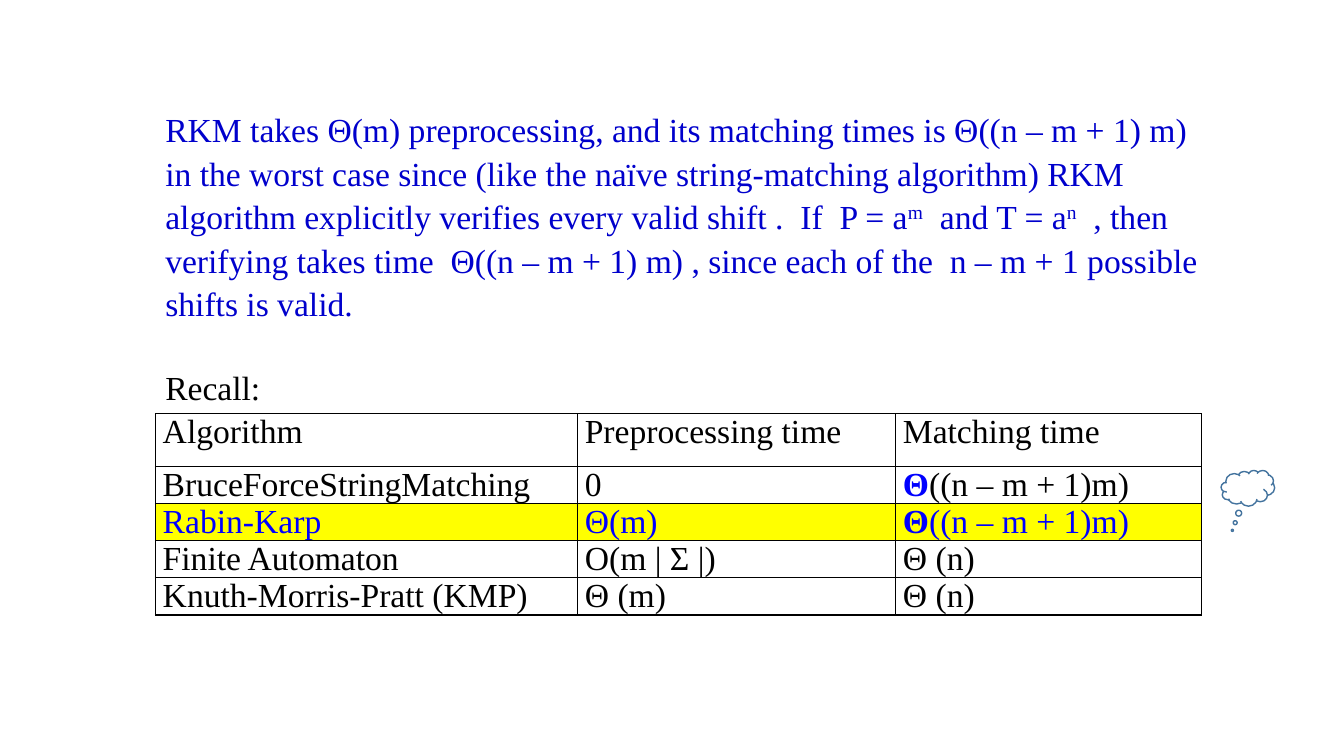
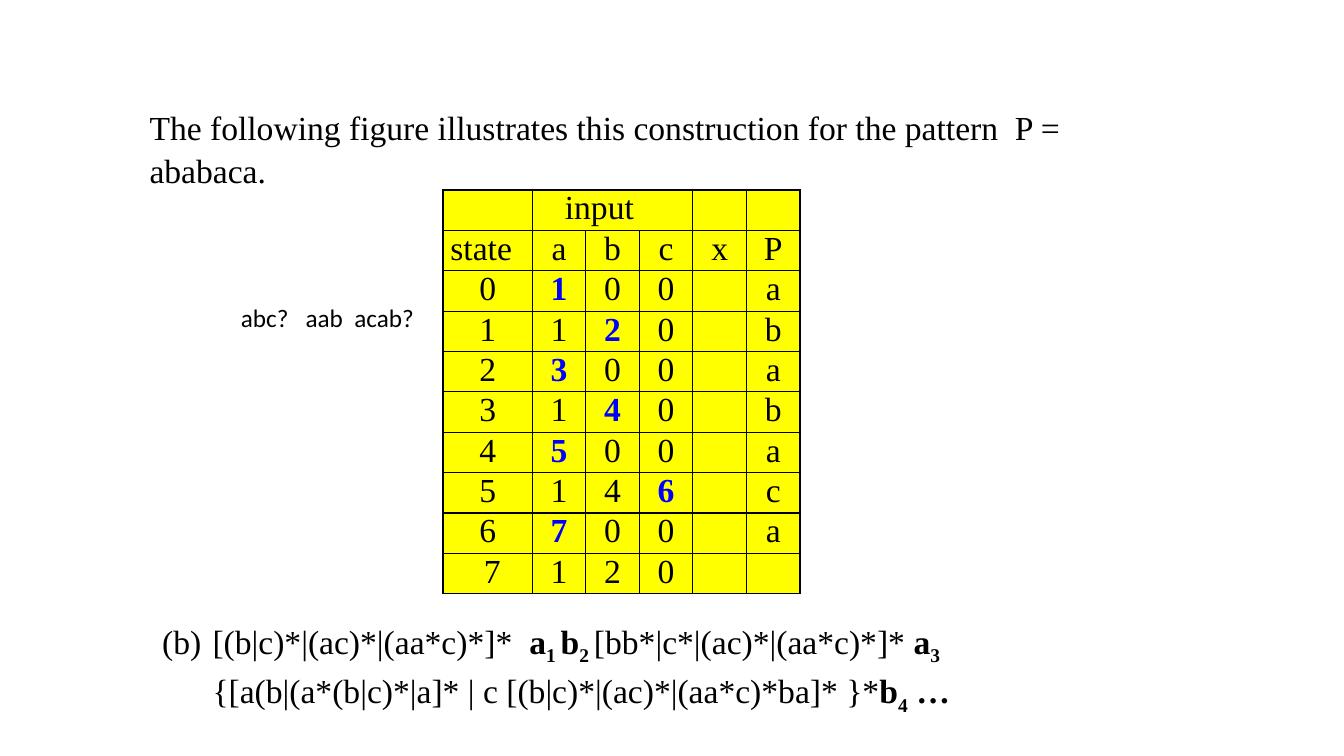
"""Build two slides on string matching: running times and a finite automaton."""
from lxml import etree
from pptx import Presentation
from pptx import util as u
from pptx.dml.color import RGBColor
from pptx.enum import shapes, text
from pptx.oxml.ns import qn

PX = 9525
SERIF = "Times New Roman"
BLACK, BLUE, NAVY = "000000", "0000FF", "0000CC"
WHITE, YELLOW, STEEL = "FFFFFF", "FFFF00", "43739E"
LINE_SPACING = 1.08
color = RGBColor.from_string


def add_runs(paragraph, runs, font=SERIF, size=24):
    """Add (text, colour, bold, baseline) runs; the last two may be left out."""
    for words, hue, *style in runs:
        bold, baseline = (style + [False, 0])[:2] if len(style) < 2 else style
        run = paragraph.add_run()
        run.text = words
        run.font.name, run.font.size, run.font.bold = font, u.Pt(size), bold
        run.font.color.rgb = color(hue)
        if baseline:
            run._r.get_or_add_rPr().set("baseline", str(baseline * 1000))


def add_grid(slide, left, top, widths, heights, rows, fills):
    """Add a black-ruled table whose cells hold lists of runs."""
    frame = slide.shapes.add_table(len(rows), len(widths), left * PX, top * PX,
                                   sum(widths) * PX, sum(heights) * PX)
    table = frame.table
    table.first_row = table.horz_banding = False
    for column, width in zip(table.columns, widths):
        column.width = width * PX
    for row, height, runs_in_row, fill in zip(table.rows, heights, rows, fills):
        row.height = height * PX
        for cell, runs in zip(row.cells, runs_in_row):
            cell.margin_left = cell.margin_right = 7 * PX
            cell.margin_top = cell.margin_bottom = 0
            add_runs(cell.text_frame.paragraphs[0], runs)
            properties = cell._tc.get_or_add_tcPr()
            for side in ("a:lnL", "a:lnR", "a:lnT", "a:lnB"):
                border = etree.SubElement(properties, qn(side), w=str(u.Pt(1)))
                solid = etree.SubElement(border, qn("a:solidFill"))
                etree.SubElement(solid, qn("a:srgbClr"), val=BLACK)
            cell.fill.solid()
            cell.fill.fore_color.rgb = color(fill)
    return table


presentation = Presentation()
presentation.slide_width, presentation.slide_height = 1280 * PX, 720 * PX
times_slide, automaton_slide = [
    presentation.slides.add_slide(presentation.slide_layouts[6]) for _ in range(2)]

algorithms = [
    ("Algorithm", "Preprocessing time", "Matching time"),
    ("BruceForceStringMatching", "0", "Θ((n – m + 1)m)"),
    ("Rabin-Karp", "Θ(m)", "Θ((n – m + 1)m)"),
    ("Finite Automaton", "O(m | Σ |)", "Θ (n)"),
    ("Knuth-Morris-Pratt (KMP)", "Θ (m)", "Θ (n)"),
]
time_rows, time_fills = [], []
for words_in_row in algorithms:
    highlighted = words_in_row[0] == "Rabin-Karp"
    hue = BLUE if highlighted else BLACK
    time_fills.append(YELLOW if highlighted else WHITE)
    time_rows.append([
        [("Θ", BLUE, True), (words[1:], hue)] if words.startswith("Θ((") else [(words, hue)]
        for words in words_in_row])
add_grid(times_slide, 148, 394, [402, 303, 291], [50] + [35] * 4, time_rows, time_fills)

automaton_rows = [
    [[], [("input", BLACK)], [], [], [], []],
    [[(heading, BLACK)] for heading in ("state", "a", "b", "c", "x", "P")],
]
transitions = ["100", "120", "300", "140", "500", "146", "700", "120"]
pattern = "ababaca"
for state, targets in enumerate(transitions):
    row = [[(str(state), BLACK)]]
    for target in targets:
        advances = int(target) == state + 1
        row.append([(target, BLUE if advances else BLACK, advances)])
    letter = pattern[state:state + 1]
    automaton_rows.append(row + [[], [(letter, BLACK)] if letter else []])
table = add_grid(automaton_slide, 422, 181, [85] + [51] * 5, [35] * 10,
                 automaton_rows, [YELLOW] * 10)
for row in list(table.rows)[1:]:
    for cell in row.cells:
        cell.text_frame.paragraphs[0].alignment = text.PP_ALIGN.CENTER
table.cell(0, 1).merge(table.cell(0, 3))
for row, column, inset in ((0, 1, 31), (1, 0, 7), (9, 0, 39)):
    cell = table.cell(row, column)
    cell.margin_left = inset * PX
    cell.text_frame.paragraphs[0].alignment = text.PP_ALIGN.LEFT

analysis = [
    ("RKM takes Θ(m) preprocessing, and its matching times is Θ((n – m + 1) m) in the "
     "worst case since (like the naïve string-matching algorithm) RKM algorithm "
     "explicitly verifies every valid shift .  If  P = a", NAVY),
    ("m", NAVY, False, 30),
    ("  and T = a", NAVY),
    ("n", NAVY, False, 30),
    ("  , then verifying takes time  Θ((n – m + 1) m) , since each of the  "
     "n – m + 1 possible shifts is valid.", NAVY),
]
construction = [("The following figure illustrates this construction for the pattern  "
                 "P = ababaca.", BLACK)]
expression_start = [
    ("[(b|c)*|(ac)*|(aa*c)*]*  ", BLACK),
    ("a", BLACK, True), ("1 ", BLACK, True, -25),
    ("b", BLACK, True), ("2 ", BLACK, True, -25),
    ("[bb*|c*|(ac)*|(aa*c)*]* ", BLACK),
    ("a", BLACK, True), ("3", BLACK, True, -25),
]
expression_end = [
    ("{[a(b|(a*(b|c)*|a]* | c [(b|c)*|(ac)*|(aa*c)*ba]* }*", BLACK),
    ("b", BLACK, True), ("4", BLACK, True, -25), (" …", BLACK, True),
]
question = [("abc?   aab  acab?", BLACK)]
text_boxes = [
    (times_slide, (148, 104, 1004, 281), [analysis, [("Recall:", BLACK)]], SERIF, 24),
    (automaton_slide, (133, 94, 991, 87), [construction], SERIF, 24),
    (automaton_slide, (145, 583, 815, 87), [expression_start, expression_end], SERIF, 24),
    (automaton_slide, (220, 283, 185, 38), [question], "Calibri", 18),
]
frames = []
for slide, box, paragraphs, font, size in text_boxes:
    frame = slide.shapes.add_textbox(*[length * PX for length in box]).text_frame
    frame.word_wrap = True
    for index, runs in enumerate(paragraphs):
        paragraph = frame.add_paragraph() if index else frame.paragraphs[0]
        paragraph.line_spacing = LINE_SPACING if font == SERIF else 1.0
        add_runs(paragraph, runs, font, size)
    frames.append(frame)

analysis_frame, _, expression_frame, _ = frames
analysis_frame.vertical_anchor = text.MSO_ANCHOR.MIDDLE
analysis_frame.paragraphs[1].space_before = u.Pt(29)

for paragraph, indent in zip(expression_frame.paragraphs, (-48, 0)):
    properties = paragraph._p.get_or_add_pPr()
    properties.set("marL", str(48 * PX))
    properties.set("indent", str(indent * PX))
numbered = expression_frame.paragraphs[0]._p.get_or_add_pPr()
etree.SubElement(numbered, qn("a:buFont"), typeface=SERIF)
etree.SubElement(numbered, qn("a:buAutoNum"), type="alphaLcParenBoth", startAt="2")

cloud = times_slide.shapes.add_shape(shapes.MSO_SHAPE.CLOUD_CALLOUT,
                                     1163 * PX, 448 * PX, 51 * PX, 34 * PX)
cloud.shadow.inherit = False
cloud.adjustments[0], cloud.adjustments[1] = -0.29, 1.18
cloud.fill.solid()
cloud.fill.fore_color.rgb = color(WHITE)
cloud.line.color.rgb = color(STEEL)
cloud.line.width = u.Pt(1)

presentation.save("out.pptx")
